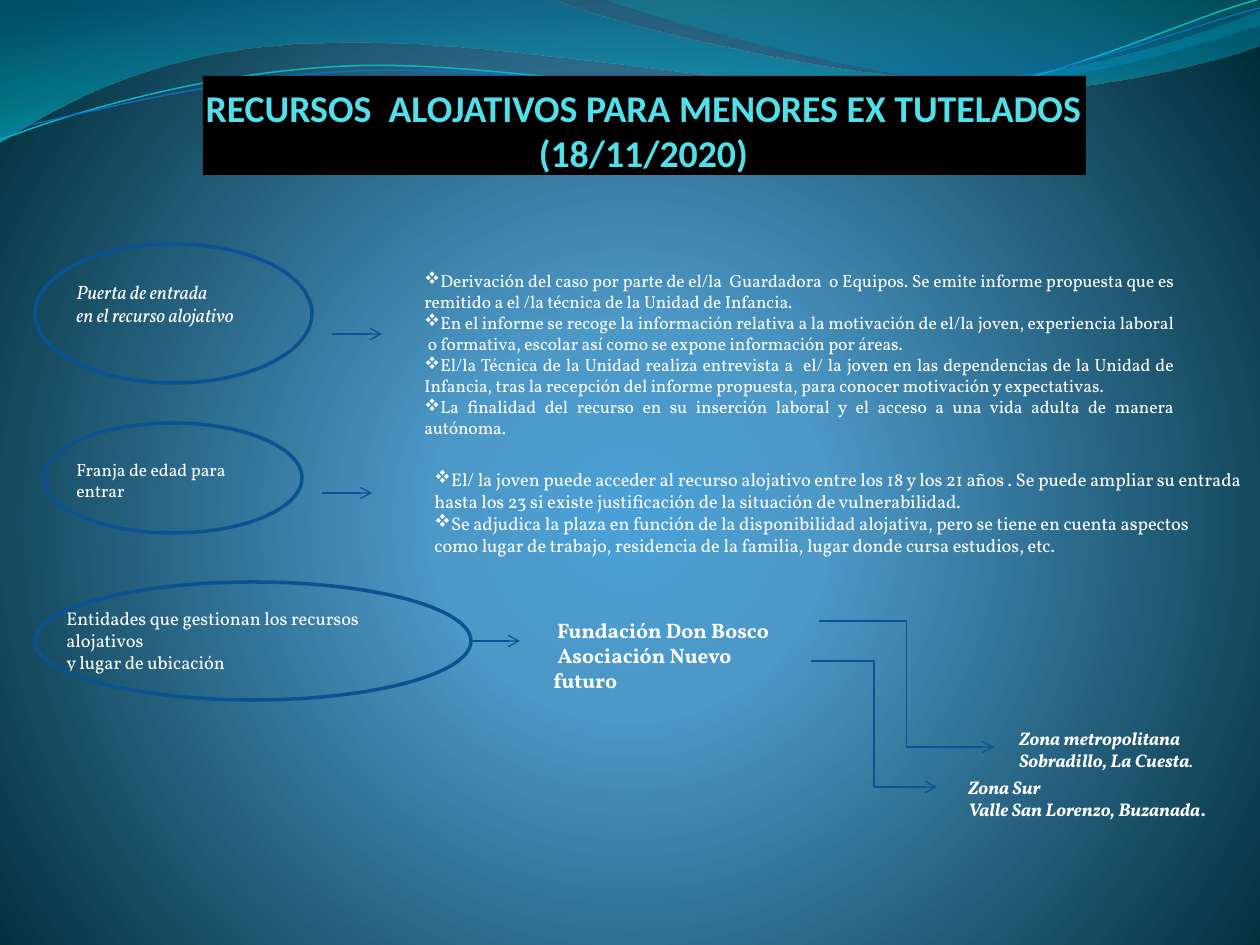
from pptx import Presentation
from pptx.dml.color import RGBColor
from pptx.enum.shapes import MSO_CONNECTOR, MSO_SHAPE
from pptx.enum.text import MSO_ANCHOR, MSO_AUTO_SIZE, PP_ALIGN
from pptx.oxml import parse_xml
from pptx.oxml.ns import nsdecls
from pptx.util import Pt
from lxml.etree import Element, SubElement

EMU_PER_PX = 914400 / 126
NS = "{http://schemas.openxmlformats.org/drawingml/2006/main}"
COLORS = {
    "text": "FFFFFF", "title": "51E0EA", "title_fill": "000000",
    "ellipse": "0B5292", "arrow": "095295",
    "teal_line": "0AB8BF", "blue_line": "0F6FC6",
}
RADIAL = ('<a:path path="circle">'
          '<a:fillToRect l="10000" t="110000" r="10000" b="100000"/></a:path>')
DOWNWARD = '<a:lin ang="5400000" scaled="0"/>'


def px(value):
    return round(value * EMU_PER_PX)


def rgb(name):
    return RGBColor.from_string(COLORS[name])


def gradient(stops, direction):
    """Gradient fill from (position %, colour, opacity %) stops."""
    marks = "".join(
        f'<a:gs pos="{pos * 1000}"><a:srgbClr val="{color}">'
        f'<a:alpha val="{alpha * 1000}"/></a:srgbClr></a:gs>'
        for pos, color, alpha in stops)
    return parse_xml(f'<a:gradFill {nsdecls("a")} rotWithShape="1">'
                     f'<a:gsLst>{marks}</a:gsLst>{direction}</a:gradFill>')


def set_gradient(fill, properties, stops, direction):
    fill.gradient()
    old = properties.find(NS + "gradFill")
    properties.replace(old, gradient(stops, direction))


class SlideWriter:
    base = {"name": "Vollkorn", "size": 10.5, "bold": False, "italic": False,
            "color": "text"}

    def __init__(self, slide):
        self.slide = slide
        self.shapes = slide.shapes

    def format(self, font, **changes):
        values = {**self.base, **changes}
        font.color.rgb = rgb(values.pop("color"))
        values["size"] = Pt(values["size"])
        for key, value in values.items():
            setattr(font, key, value)

    def background(self, stops):
        fill = self.slide.background.fill
        fill.gradient()
        properties = self.slide._element.cSld.find(".//" + NS + "gradFill").getparent()
        set_gradient(fill, properties, stops, RADIAL)

    def wave(self, segments, stops=None, line=None, width=0.75):
        """Segments are points, or cubic curves given by three points."""
        ends = [tuple(map(px, segment[-2:])) for segment in segments]
        builder = self.shapes.build_freeform(*ends[0], scale=1.0)
        builder.add_line_segments(ends[1:], close=bool(stops))
        wave = builder.convert_to_shape()
        # Bend the straight segments into curves
        steps = wave._element.findall(".//" + NS + "lnTo")
        for step, segment in zip(steps, segments[1:]):
            if len(segment) == 6:
                curve = Element(NS + "cubicBezTo")
                for x, y in zip(segment[::2], segment[1::2]):
                    SubElement(curve, NS + "pt", x=str(px(x) - wave.left),
                               y=str(px(y) - wave.top))
                step.getparent().replace(step, curve)
        wave.shadow.inherit = False
        if stops:
            set_gradient(wave.fill, wave._element.spPr, stops, DOWNWARD)
            wave.line.fill.background()
        else:
            wave.fill.background()
            wave.line.color.rgb = rgb(line)
            wave.line.width = Pt(width)

    def title(self, box, text):
        title = self.shapes.title
        self.shapes._spTree.append(title._element)  # above the waves
        title.left, title.top, title.width, title.height = map(px, box)
        title.fill.solid()
        title.fill.fore_color.rgb = rgb("title_fill")
        frame = title.text_frame
        frame.text = text
        settings = {"auto_size": MSO_AUTO_SIZE.NONE, "word_wrap": True,
                    "vertical_anchor": MSO_ANCHOR.BOTTOM, "margin_left": 0,
                    "margin_top": 0, "margin_right": px(2), "margin_bottom": 0}
        for key, value in settings.items():
            setattr(frame, key, value)
        frame.paragraphs[0].alignment = PP_ALIGN.CENTER
        self.format(frame.paragraphs[0].runs[0].font, name="Calibri", size=21.6,
                    bold=True, color="title")

    def text(self, box, paragraphs, align=PP_ALIGN.LEFT, bullets=(), **style):
        """Each paragraph is a string or a list of (text, changes) runs."""
        frame = self.shapes.add_textbox(*map(px, box)).text_frame
        frame.word_wrap = True
        frame.auto_size = MSO_AUTO_SIZE.SHAPE_TO_FIT_TEXT
        for number, content in enumerate(paragraphs):
            paragraph = frame.paragraphs[0] if number == 0 else frame.add_paragraph()
            paragraph.alignment = align
            if number in bullets:
                properties = paragraph._p.get_or_add_pPr()
                SubElement(properties, NS + "buFont", typeface="Wingdings", charset="2")
                SubElement(properties, NS + "buChar", char="v")
            runs = [(content, {})] if isinstance(content, str) else content
            for words, changes in runs:
                run = paragraph.add_run()
                run.text = words
                self.format(run.font, **{**style, **changes})

    def ellipse(self, box):
        ellipse = self.shapes.add_shape(MSO_SHAPE.OVAL, *map(px, box))
        ellipse.shadow.inherit = False
        ellipse.fill.background()
        ellipse.line.color.rgb = rgb("ellipse")
        ellipse.line.width = Pt(2)

    def arrow(self, start, end, kind=MSO_CONNECTOR.STRAIGHT):
        arrow = self.shapes.add_connector(kind, *map(px, start + end))
        arrow.line.color.rgb = rgb("arrow")
        arrow.line.width = Pt(0.75)
        SubElement(arrow.line._get_or_add_ln(), NS + "tailEnd", type="arrow")
        SubElement(arrow._element.spPr, NS + "effectLst")


def main():
    prs = Presentation()
    prs.slide_width, prs.slide_height = px(1260), px(945)
    page = SlideWriter(prs.slides.add_slide(prs.slide_layouts[5]))

    # Background and waves
    page.background([(0, "4AA0D6", 100), (25, "4C98C7", 100), (100, "002C38", 100)])
    page.wave([(0, 0), (554, 0), (600, 21, 837, 79, 955, 79),
               (1075, 79, 1207, 33, 1260, 11), (1260, 45),
               (1239, 55, 1096, 96, 940, 95), (784, 95, 481, 35, 324, 43),
               (163, 45, 58, 105, 0, 142)],
              stops=[(0, "0074A1", 45), (100, "00C6CF", 55)])
    page.wave([(604, 0), (641, 14, 859, 78, 969, 82),
               (1079, 87, 1211, 40, 1260, 26), (1260, 0)],
              stops=[(0, "00A1A9", 30), (80, "008BBF", 45)])
    page.wave([(0, 140), (60, 117, 199, 72, 349, 66), (498, 59, 747, 112, 898, 101),
               (1050, 89, 1182, 19, 1257, 0)], line="teal_line", width=0.85)
    page.wave([(0, 131), (59, 121, 207, 77, 357, 71), (508, 64, 752, 106, 903, 95),
               (1053, 84, 1186, 26, 1260, 8)], line="blue_line")

    page.title((203, 76, 883, 99),
               "RECURSOS  ALOJATIVOS PARA MENORES EX TUTELADOS (18/11/2020)")

    # Entry to the resource
    page.text((64, 274, 198, 59),
              ["Puerta de entrada", "en el recurso alojativo"], size=11, italic=True)
    page.ellipse((35, 244, 277, 139))
    page.arrow((332, 334), (382, 334))
    page.text((412, 264, 774, 183), [
        "Derivación del caso por parte de el/la  Guardadora  o Equipos. Se emite informe "
        "propuesta que es remitido a el /la técnica de la Unidad de Infancia.",
        "En el informe se recoge la información relativa a la motivación de el/la joven, "
        "experiencia laboral  o formativa, escolar así como se expone información por áreas.",
        "El/la Técnica de la Unidad realiza entrevista a  el/ la joven en las dependencias "
        "de la Unidad de Infancia, tras la recepción del informe propuesta, para conocer "
        "motivación y expectativas.",
        "La finalidad del recurso en su inserción laboral y el acceso a una vida adulta "
        "de manera autónoma. ",
    ], align=PP_ALIGN.JUSTIFY, bullets=range(4), size=10)

    # Age range
    page.text((64, 453, 208, 55), ["Franja de edad para entrar"], size=10)
    page.ellipse((44, 423, 258, 110))
    page.arrow((322, 493), (372, 493))
    page.text((422, 462, 838, 102), [
        "El/ la joven puede acceder al recurso alojativo entre los 18 y los 21 años . "
        "Se puede ampliar su entrada",
        "hasta los 23 si existe justificación de la situación de vulnerabilidad.",
        "Se adjudica la plaza en función de la disponibilidad alojativa, pero se tiene "
        "en cuenta aspectos",
        "como lugar de trabajo, residencia de la familia, lugar donde cursa estudios, etc.",
    ], bullets=(0, 2))

    # Managing entities and their locations
    page.text((54, 601, 381, 57), ["Entidades que gestionan los recursos alojativos",
                                   "y lugar de ubicación"])
    page.ellipse((35, 582, 436, 118))
    page.arrow((471, 641), (520, 641))
    page.text((541, 611, 247, 63),
              [[(" ", {"size": 10.5}), ("Fundación Don Bosco", {})],
               " Asociación Nuevo futuro"], size=12, bold=True)
    page.arrow((819, 621), (994, 747), MSO_CONNECTOR.ELBOW)
    page.arrow((811, 661), (937, 787), MSO_CONNECTOR.ELBOW)
    page.text((1007, 721, 219, 57),
              ["Zona metropolitana", [("Sobradillo, La Cuesta", {}), (".", {"bold": False})]],
              bold=True, italic=True)
    page.text((956, 770, 289, 57),
              ["Zona Sur", [("Valle San Lorenzo, Buzanada", {}), (".", {"italic": False})]],
              bold=True, italic=True)

    prs.save("out.pptx")


if __name__ == "__main__":
    main()
